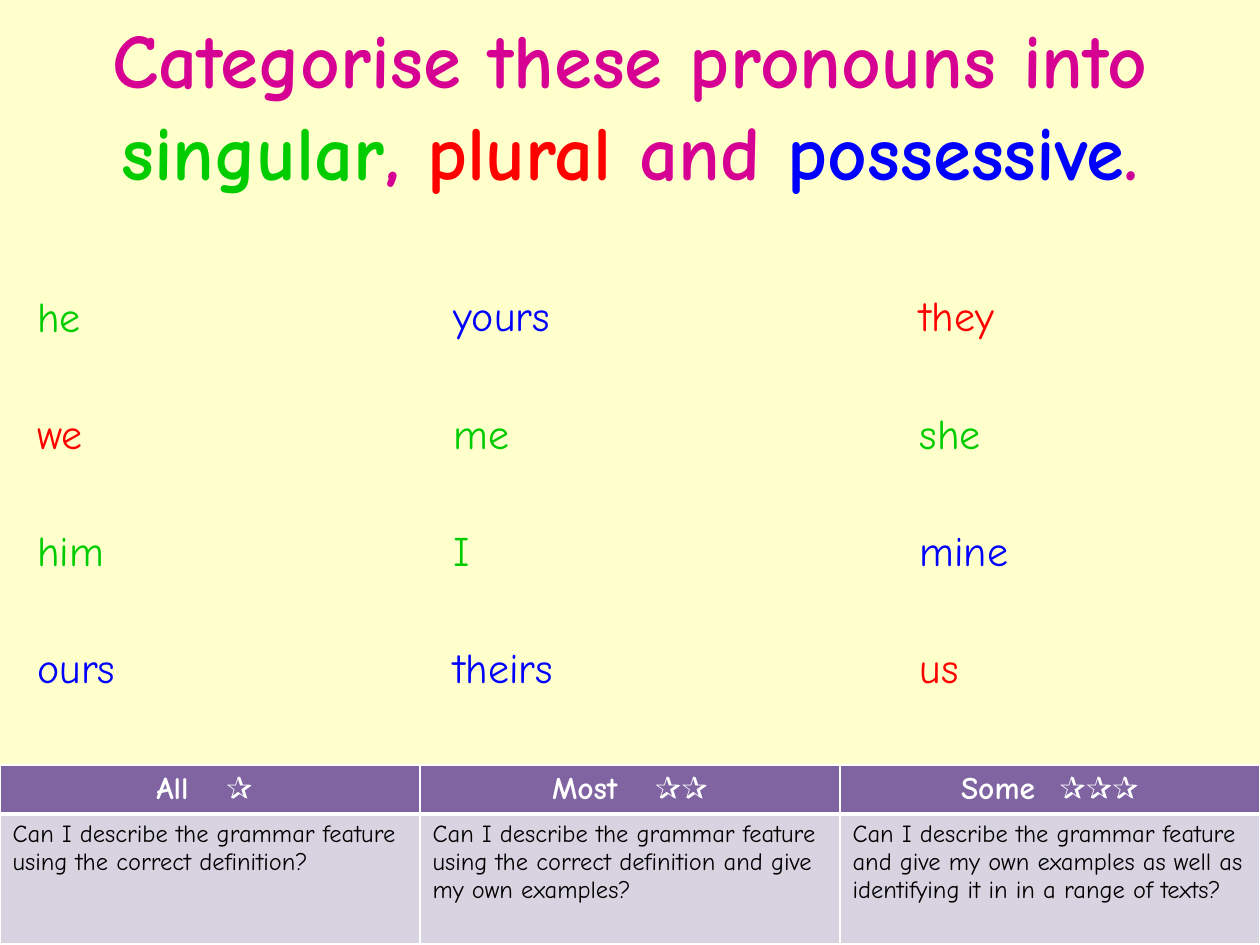
from lxml.etree import SubElement
from pptx import Presentation
from pptx.dml.color import RGBColor
from pptx.enum.text import MSO_ANCHOR, MSO_AUTO_SIZE, PP_ALIGN
from pptx.oxml.ns import qn
from pptx.util import Cm, Pt

FONT = "Comic Neue"
CREAM = RGBColor(0xFF, 0xFF, 0xCC)
MAGENTA = RGBColor(0xD6, 0x00, 0x93)
DARK_MAGENTA = RGBColor(0xCC, 0x00, 0x99)
GREEN = RGBColor(0x00, 0xCC, 0x00)
RED = RGBColor(0xFF, 0x00, 0x00)
BLUE = RGBColor(0x00, 0x00, 0xFF)
PURPLE = RGBColor(0x80, 0x64, 0xA2)
LILAC = RGBColor(0xD8, 0xD3, 0xE0)
WHITE = RGBColor(0xFF, 0xFF, 0xFF)
BLACK = RGBColor(0x00, 0x00, 0x00)

SINGULAR, PLURAL, POSSESSIVE = GREEN, RED, BLUE

TITLE = [
    ("Categorise these pronouns into ", MAGENTA), ("singular", SINGULAR),
    (", ", MAGENTA), ("plural", PLURAL), (" and ", MAGENTA),
    ("possessive", POSSESSIVE), (".", DARK_MAGENTA),
]
# Left edge in cm, then the words of each column
PRONOUNS = [
    (0.5, [("he", SINGULAR), ("we", PLURAL), ("him", SINGULAR),
           ("ours", POSSESSIVE)]),
    (8.9, [("yours", POSSESSIVE), ("me", SINGULAR), ("I", SINGULAR),
           ("theirs", POSSESSIVE)]),
    (18.29, [("they", PLURAL), ("she", SINGULAR), ("mine", POSSESSIVE),
             ("us", PLURAL)]),
]
# Level, gap before the stars in points, stars, question
CRITERIA = [
    ("All", 15, "✰ ",
     "Can I describe the grammar feature using the correct definition?"),
    ("Most", 15, "✰✰",
     "Can I describe the grammar feature using the correct definition "
     "and give my own examples?"),
    ("Some", 7.5, "✰✰✰",
     "Can I describe the grammar feature and give my own examples as well "
     "as identifying it in in a range of texts?"),
]


def add_text(paragraph, text, size, color, bold=False, align=None, spacing=0):
    """Append a formatted run; spacing widens its letters, in points."""
    run = paragraph.add_run()
    run.text = text
    run.font.name = FONT
    run.font.size = Pt(size)
    run.font.bold = bold
    run.font.color.rgb = color
    if align is not None:
        paragraph.alignment = align
    if spacing:
        run.font._element.set("spc", str(int(spacing * 100)))


def place(shape, left, top, width, height):
    shape.left, shape.top = Cm(left), Cm(top)
    shape.width, shape.height = Cm(width), Cm(height)


def fill_title(title):
    place(title, 0, 0.05, 25.4, 4.09)
    frame = title.text_frame
    frame.auto_size = MSO_AUTO_SIZE.NONE
    frame.vertical_anchor = MSO_ANCHOR.MIDDLE
    for text, color in TITLE:
        add_text(frame.paragraphs[0], text, 44, color, bold=True,
                 align=PP_ALIGN.CENTER)


def fill_pronouns(column, left, words):
    place(column, left, 5.72, 5.8, 12.29)
    frame = column.text_frame
    frame.word_wrap = True
    frame.auto_size = MSO_AUTO_SIZE.NONE
    for index, (word, color) in enumerate(words):
        paragraph = frame.add_paragraph() if index else frame.paragraphs[0]
        paragraph.space_before = Pt(38.2 if index else 0)
        add_text(paragraph, word, 24, color, align=PP_ALIGN.LEFT)
        # No bullet, no hanging indent
        properties = paragraph._p.get_or_add_pPr()
        properties.set("marL", "0")
        properties.set("indent", "0")
        SubElement(properties, qn("a:buNone"))


def style_cell(cell, fill, bottom):
    """White borders, drawn before the fill as the schema orders them."""
    properties = cell._tc.get_or_add_tcPr()
    for side, width in (("L", 1), ("R", 1), ("T", 1), ("B", bottom)):
        line = SubElement(properties, qn(f"a:ln{side}"), w=str(Pt(width)))
        solid = SubElement(line, qn("a:solidFill"))
        SubElement(solid, qn("a:srgbClr"), val=str(WHITE))
    cell.fill.solid()
    cell.fill.fore_color.rgb = fill


def add_criteria(slide):
    table = slide.shapes.add_table(2, len(CRITERIA), Cm(0), Cm(15.42),
                                   Cm(25.4), Cm(3.58)).table
    table.rows[0].height, table.rows[1].height = Cm(0.96), Cm(2.62)
    for index, (level, gap, stars, question) in enumerate(CRITERIA):
        header, body = table.cell(0, index), table.cell(1, index)
        style_cell(header, PURPLE, bottom=3)
        style_cell(body, LILAC, bottom=1)
        for text, spacing in ((level, 0), (" ", gap), (stars, 0)):
            add_text(header.text_frame.paragraphs[0], text, 18, WHITE,
                     bold=True, align=PP_ALIGN.CENTER, spacing=spacing)
        add_text(body.text_frame.paragraphs[0], question, 14, BLACK)


def main():
    presentation = Presentation()
    presentation.slide_width, presentation.slide_height = Cm(25.4), Cm(19.05)
    slide = presentation.slides.add_slide(presentation.slide_layouts[1])
    slide.background.fill.solid()
    slide.background.fill.fore_color.rgb = CREAM

    # Heading
    fill_title(slide.shapes.title)

    # Pronoun columns: the first in the body placeholder
    for index, (left, words) in enumerate(PRONOUNS):
        column = (slide.shapes.add_textbox(0, 0, 0, 0) if index
                  else slide.placeholders[1])
        fill_pronouns(column, left, words)

    # Success criteria
    add_criteria(slide)
    presentation.save("out.pptx")


if __name__ == "__main__":
    main()
